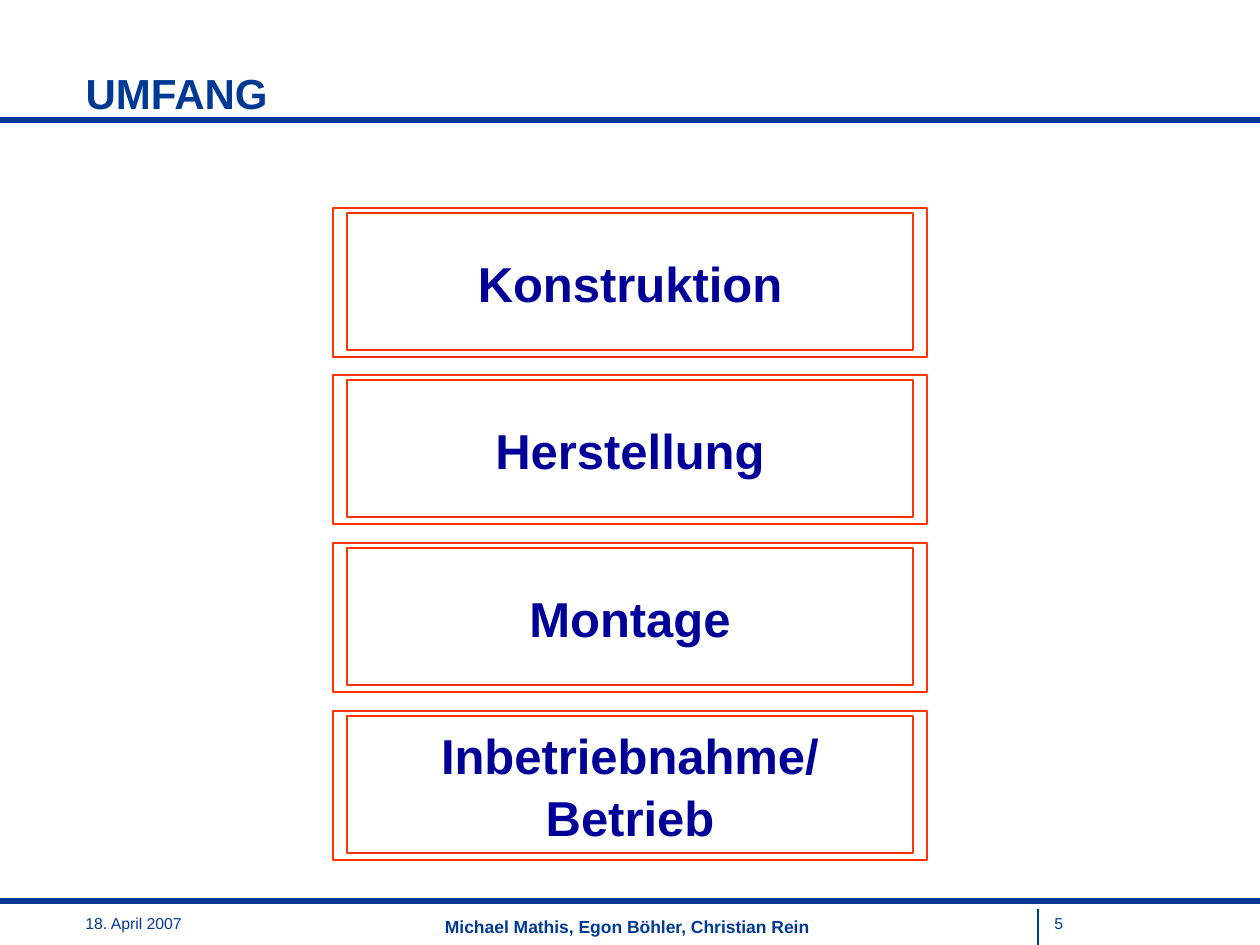
from pptx import Presentation
from pptx.dml.color import RGBColor
from pptx.enum.shapes import MSO_CONNECTOR, MSO_SHAPE
from pptx.enum.text import MSO_ANCHOR, PP_ALIGN
from pptx.util import Emu, Pt
from lxml import etree

BLUE = RGBColor(0x00, 0x39, 0x94)
NAVY = RGBColor(0x00, 0x00, 0x99)
RED = RGBColor(0xFF, 0x33, 0x00)
STRAIGHT = MSO_CONNECTOR.STRAIGHT
RECTANGLE = MSO_SHAPE.RECTANGLE
MIDDLE = MSO_ANCHOR.MIDDLE
LEFT, CENTER = PP_ALIGN.LEFT, PP_ALIGN.CENTER
DRAWING = "{http://schemas.openxmlformats.org/drawingml/2006/main}"


def px(*lengths):
    """Turn pixels (126 to the inch) into EMU."""
    return [Emu(round(length * 914400 / 126)) for length in lengths]


def write(box, text, size, color, bold, align):
    frame = box.text_frame
    frame.word_wrap = True
    frame.text = text
    para = frame.paragraphs[0]
    para.alignment = align
    para.font.name = "Arial"
    para.font.size = Pt(size)
    para.font.bold = bold
    para.font.color.rgb = color
    return frame


deck = Presentation()
deck.slide_width, deck.slide_height = px(1260, 945)
page = deck.slides.add_slide(deck.slide_layouts[5])

# Rules under the title and above the footer, and the page number divider
for x1, y1, x2, y2, weight in [
    (0, 120, 1260, 120, 3),
    (0, 901, 1260, 901, 3),
    (1038, 909, 1038, 945, 1),
]:
    rule = page.shapes.add_connector(STRAIGHT, *px(x1, y1, x2, y2))
    rule.line.color.rgb = BLUE
    rule.line.width = Pt(weight)
    etree.SubElement(rule._element.spPr, DRAWING + "effectLst")

title = page.shapes.title
title.left, title.top, title.width, title.height = px(73, 56, 892, 73)
write(title, "UMFANG", 24, BLUE, True, LEFT).vertical_anchor = MIDDLE

# Footer
for text, left, top, width, height, size, bold, align in [
    ("18. April 2007", 73, 908, 189, 32, 9, False, LEFT),
    ("Michael Mathis, Egon Böhler, Christian Rein", 233, 910, 788, 34, 10, True, CENTER),
    ("5", 1042, 908, 126, 32, 9, False, LEFT),
]:
    box = page.shapes.add_textbox(*px(left, top, width, height))
    write(box, text, size, BLUE, bold, align)

# Four double-framed phases, stacked at an equal pitch
phases = ["Konstruktion", "Herstellung", "Montage", "Inbetriebnahme/ Betrieb"]
for row, phase in enumerate(phases):
    top = 208 + 168 * row - (row > 0)
    inner = page.shapes.add_shape(RECTANGLE, *px(347, top + 5, 566, 137))
    outer = page.shapes.add_shape(RECTANGLE, *px(333, top, 594, 149))
    for frame_box in (inner, outer):
        frame_box.shadow.inherit = False
        frame_box.fill.background()
        frame_box.line.color.rgb = RED
        frame_box.line.width = Pt(1.25)
    label = write(inner, phase, 28, NAVY, True, CENTER)
    label.vertical_anchor = MIDDLE
    label.paragraphs[0].line_spacing = 1.05

deck.save("out.pptx")
